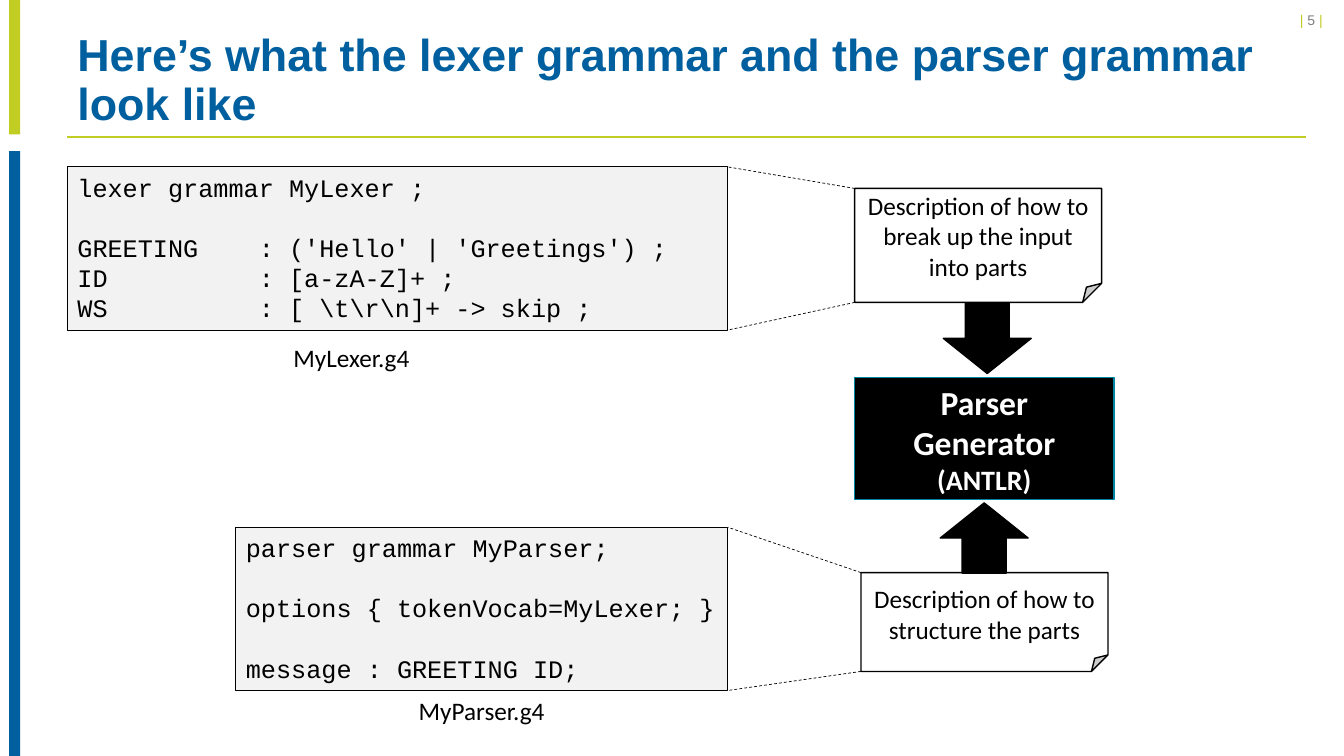
from lxml import etree
from pptx import Presentation
from pptx.dml.color import RGBColor
from pptx.enum.dml import MSO_LINE
from pptx.enum.shapes import MSO_CONNECTOR, MSO_SHAPE
from pptx.enum.text import MSO_ANCHOR, PP_ALIGN
from pptx.oxml.ns import qn
from pptx.util import Pt

RECT, NOTE = MSO_SHAPE.RECTANGLE, MSO_SHAPE.FOLDED_CORNER
DOWN, UP = MSO_SHAPE.DOWN_ARROW, MSO_SHAPE.UP_ARROW
LEFT, CENTER, RIGHT = PP_ALIGN.LEFT, PP_ALIGN.CENTER, PP_ALIGN.RIGHT
TOP, MIDDLE = MSO_ANCHOR.TOP, MSO_ANCHOR.MIDDLE
STRAIGHT, DASH = MSO_CONNECTOR.STRAIGHT, MSO_LINE.DASH

COLORS = {
    "lime": RGBColor(0xC1, 0xCD, 0x23),
    "blue": RGBColor(0x00, 0x5F, 0x9E),
    "teal": RGBColor(0x00, 0x84, 0xA3),
    "gray": RGBColor(0x80, 0x80, 0x80),
    "paper": RGBColor(0xF2, 0xF2, 0xF2),
    "black": RGBColor(0, 0, 0),
    "white": RGBColor(255, 255, 255),
}
THEME = {
    "title": ("blue", {"name": "Arial", "size": Pt(32), "bold": True}),
    "bar": ("lime", {"name": "Arial", "size": Pt(10)}),
    "number": ("gray", {"name": "Arial", "size": Pt(10)}),
    "code": ("black", {"name": "Courier New", "size": Pt(18)}),
    "label": ("black", {"name": "Calibri", "size": Pt(18)}),
    "tool": ("white", {"name": "Calibri", "size": Pt(24), "bold": True}),
    "tool name": ("white", {"name": "Calibri", "size": Pt(20), "bold": True}),
}
CODE_PITCH = Pt(21.6)
CODE_TAB = Pt(129.6)

deck = Presentation()
deck.slide_width, deck.slide_height = Pt(960), Pt(540)
slide = deck.slides.add_slide(deck.slide_layouts[6])


def add_part(kind, box, fill=None, outline=None, width=1):
    """Add a preset shape, or a text box when kind is None."""
    place = [Pt(length) for length in box]
    if kind is None:
        return slide.shapes.add_textbox(*place)
    part = slide.shapes.add_shape(kind, *place)
    part.shadow.inherit = False
    part.fill.solid()
    part.fill.fore_color.rgb = COLORS[fill]
    if outline:
        part.line.color.rgb = COLORS[outline]
        part.line.width = Pt(width)
    else:
        part.line.fill.background()
    return part


def write(part, lines, align=LEFT, anchor=TOP):
    """Fill a part with lines, each a list of (text, style) runs."""
    frame = part.text_frame
    frame.word_wrap = True
    frame.vertical_anchor = anchor
    for index, line in enumerate(lines):
        paragraph = frame.add_paragraph() if index else frame.paragraphs[0]
        paragraph.alignment = align
        for text, style in line:
            run = paragraph.add_run()
            run.text = text
            color, formats = THEME[style]
            run.font.color.rgb = COLORS[color]
            for attribute, value in formats.items():
                setattr(run.font, attribute, value)
    return frame.paragraphs


# Page frame
add_part(RECT, (6.5, 0, 8, 96), "lime")
add_part(RECT, (6.5, 108, 8, 432), "blue")
page_number = [("| ", "bar"), ("5 ", "number"), ("|", "bar")]
write(add_part(None, (783.4, 5, 168.5, 19.4)), [page_number], RIGHT)
title = "Here’s what the lexer grammar and the parser grammar look like"
heading = write(add_part(None, (48.2, 28.8, 885, 59)), [[(title, "title")]], anchor=MIDDLE)
heading[0].line_spacing = 0.9

# Grammars: code box, code blocks, file name, name box, note box, note
grammars = [
    ((48.2, 119.2, 471.6, 116.6),
     [["lexer grammar MyLexer ;"],
      ["GREETING\t: ('Hello' | 'Greetings') ;",
       "ID\t: [a-zA-Z]+ ;",
       "WS\t: [ \\t\\r\\n]+ -> skip ;"]],
     "MyLexer.g4", (191, 241.2, 120, 28.8),
     (610.5, 134.6, 176.4, 81.4),
     "Description of how to break up the input into parts"),
    ((168.5, 376.6, 351.3, 116.6),
     [["parser grammar MyParser;"],
      ["options { tokenVocab=MyLexer; }"],
      ["message : GREETING ID;"]],
     "MyParser.g4", (284, 492.8, 120, 28.8),
     (615, 409, 176.4, 70.6),
     "Description of how to structure the parts"),
]
links = [((48.2, 97.9), (933.1, 97.9), "lime", 1, None)]
for code_box, blocks, file_name, name_box, note_box, note in grammars:
    code_part = add_part(RECT, code_box, "paper", "black", 0.75)
    code_lines = [[(line, "code")] for block in blocks for line in block]
    block_starts = {block[0] for block in blocks[1:]}
    for paragraph in write(code_part, code_lines):
        paragraph.line_spacing = CODE_PITCH
        if paragraph.text in block_starts:
            paragraph.space_before = CODE_PITCH
        if "\t" in paragraph.text:
            tabs = etree.SubElement(paragraph._p.get_or_add_pPr(), qn("a:tabLst"))
            etree.SubElement(tabs, qn("a:tab"), pos=str(CODE_TAB), algn="l")

    write(add_part(None, name_box), [[(file_name, "label")]], CENTER)
    write(add_part(NOTE, note_box, "white", "black"), [[(note, "label")]], CENTER, MIDDLE)

    code_left, code_top, code_width, code_height = code_box
    note_left, note_top, _, note_height = note_box
    code_right = code_left + code_width
    links += [
        ((note_left, note_top), (code_right, code_top), "black", 0.5, DASH),
        ((note_left, note_top + note_height), (code_right, code_top + code_height),
         "black", 0.5, DASH),
    ]

# Generator fed by both notes
generator = add_part(RECT, (610.5, 269.8, 185.2, 86.9), "black", "teal")
write(generator, [[("Parser", "tool")], [("Generator", "tool")], [("(ANTLR)", "tool name")]],
      CENTER, MIDDLE)
for direction, left, top in ((DOWN, 673.8, 216.6), (UP, 671.6, 359.2)):
    add_part(direction, (left, top, 62.8, 50.2), "black", "black")

# Title rule and dashed links
for start, end, color, width, dash in links:
    link = slide.shapes.add_connector(STRAIGHT, *(Pt(length) for length in start + end))
    link.line.color.rgb = COLORS[color]
    link.line.width = Pt(width)
    link.line.dash_style = dash
    etree.SubElement(link._element.spPr, qn("a:effectLst"))

deck.save("out.pptx")
